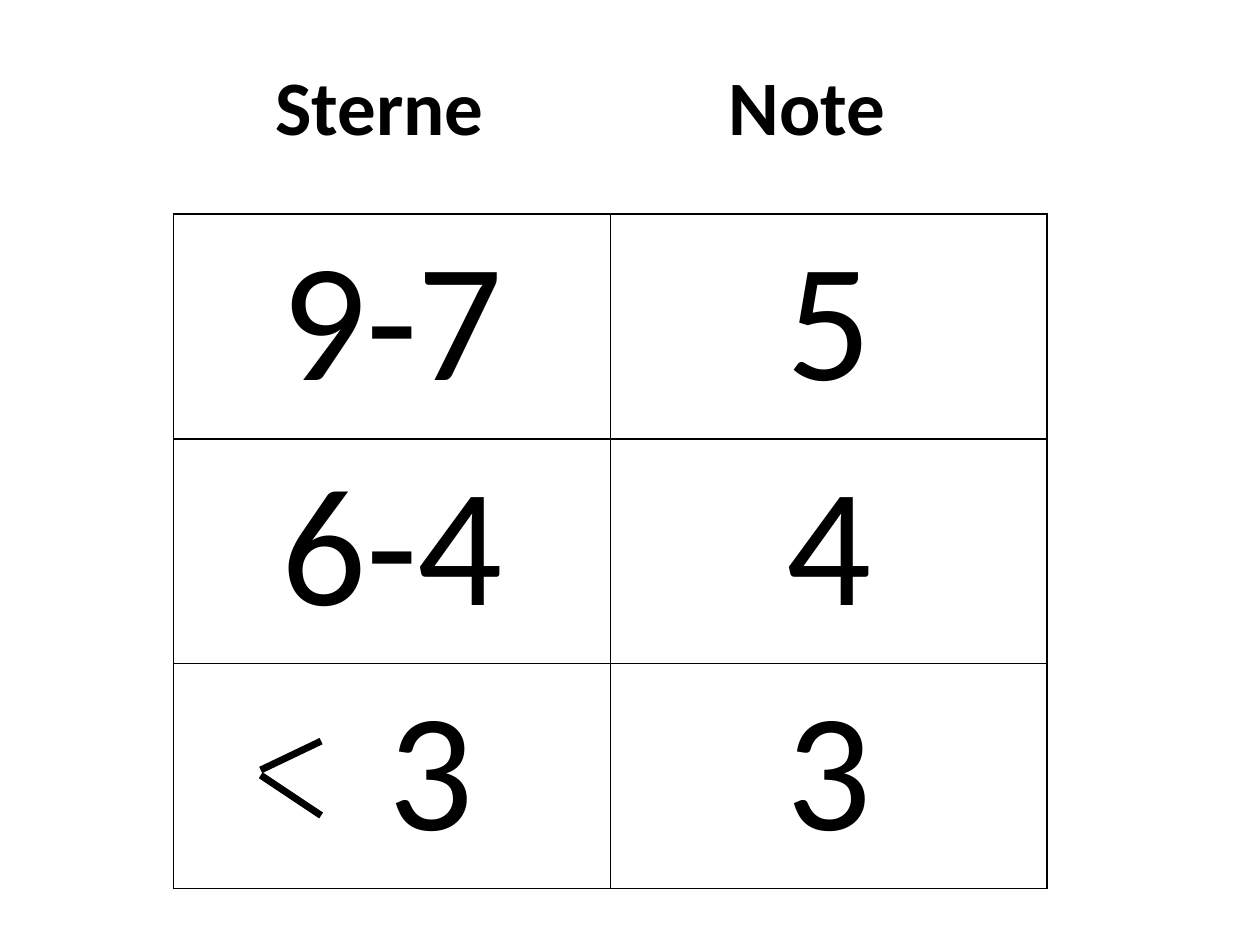
from lxml.etree import SubElement
from pptx import Presentation
from pptx.dml.color import RGBColor
from pptx.enum.shapes import MSO_CONNECTOR
from pptx.enum.text import MSO_ANCHOR, PP_ALIGN
from pptx.oxml.ns import qn
from pptx.util import Pt

FONT = "Calibri"
BLACK = "000000"
GRADES = [("9-7", "5"), ("6-4", "4"), ("3", "3")]


def color(hex_string):
    return RGBColor.from_string(hex_string)


def style_paragraph(paragraph, size, bold=False):
    paragraph.font.name = FONT
    paragraph.font.size = Pt(size)
    paragraph.font.bold = bold
    paragraph.font.color.rgb = color(BLACK)


def add_heading(slide, left, top, width, height, column_centers):
    """Centre each column heading on its own tab stop."""
    shape = slide.shapes.add_textbox(Pt(left), Pt(top), Pt(width), Pt(height))
    frame = shape.text_frame
    frame.word_wrap = True
    frame.vertical_anchor = MSO_ANCHOR.MIDDLE
    paragraph = frame.paragraphs[0]
    paragraph.add_run().text = "\tSterne\tNote"
    paragraph.alignment = PP_ALIGN.LEFT
    style_paragraph(paragraph, 44, bold=True)
    tab_list = paragraph._p.get_or_add_pPr()
    tabs = SubElement(tab_list, qn("a:tabLst"))
    # The schema puts tab stops before the default run properties.
    tab_list.insert(0, tabs)
    for center in column_centers:
        SubElement(tabs, qn("a:tab"), pos=str(Pt(center)), algn="ctr")


def add_borders(cell):
    properties = cell._tc.get_or_add_tcPr()
    for index, side in enumerate(("lnL", "lnR", "lnT", "lnB")):
        line = SubElement(properties, qn(f"a:{side}"), w=str(Pt(1)))
        fill = SubElement(line, qn("a:solidFill"))
        SubElement(fill, qn("a:srgbClr"), val=BLACK)
        properties.insert(index, line)


def add_grade_table(slide, left, top, width, height):
    shape = slide.shapes.add_table(
        len(GRADES), 2, Pt(left), Pt(top), Pt(width), Pt(height))
    table = shape.table
    table.first_row = False
    table.horz_banding = False
    for row, values in enumerate(GRADES):
        for column, value in enumerate(values):
            cell = table.cell(row, column)
            cell.fill.background()
            cell.text = value
            paragraph = cell.text_frame.paragraphs[0]
            paragraph.alignment = PP_ALIGN.CENTER
            style_paragraph(paragraph, 96)
            add_borders(cell)
    # Leave room for the less-than sign.
    table.cell(len(GRADES) - 1, 0).margin_left = Pt(52)


def add_less_than_sign(slide, left, top, width, height):
    tip = height * 0.4
    strokes = [(width, 0, 0, tip - 0.5), (0, tip + 2.5, width, height)]
    for start_x, start_y, end_x, end_y in strokes:
        connector = slide.shapes.add_connector(
            MSO_CONNECTOR.STRAIGHT,
            Pt(left + start_x), Pt(top + start_y),
            Pt(left + end_x), Pt(top + end_y))
        connector.line.color.rgb = color(BLACK)
        connector.line.width = Pt(4)
        SubElement(connector._element.spPr, qn("a:effectLst"))


def main():
    presentation = Presentation()
    presentation.slide_width = Pt(720)
    presentation.slide_height = Pt(540)
    slide = presentation.slides.add_slide(presentation.slide_layouts[6])
    add_heading(slide, 9, 15, 648, 90, column_centers=(201, 445))
    add_grade_table(slide, 99.25, 122.25, 499, 385.5)
    add_less_than_sign(slide, 149, 423.5, 34.5, 42.5)
    presentation.save("out.pptx")


if __name__ == "__main__":
    main()
